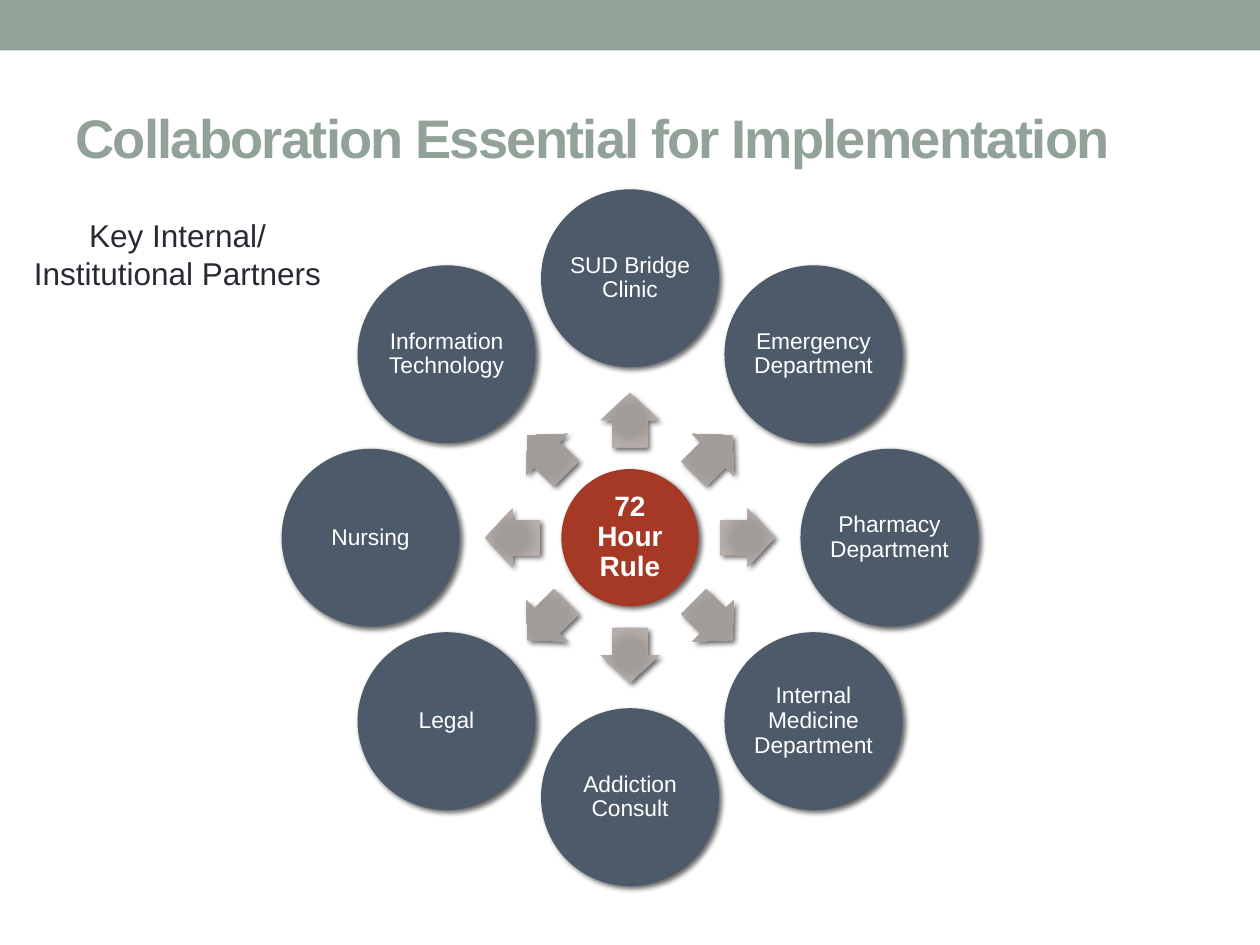
import math
from lxml import etree
from pptx import Presentation
from pptx.dml.color import RGBColor
from pptx.enum import shapes, text
from pptx.oxml import parse_xml
from pptx.oxml import ns
from pptx.util import Cm, Pt

SAGE = RGBColor(0x93, 0xA2, 0x99)
SLATE = RGBColor(0x4C, 0x5A, 0x6A)
BRICK = RGBColor(0xA5, 0x39, 0x26)
INK = RGBColor(0x29, 0x29, 0x34)
WHITE = RGBColor(0xFF, 0xFF, 0xFF)
BLACK = RGBColor(0x00, 0x00, 0x00)
ARROW_STOPS = [
    (0, RGBColor(0xA2, 0x9C, 0x99)),
    (34, RGBColor(0xA2, 0x9C, 0x99)),
    (70, RGBColor(0xB5, 0xAE, 0xAB)),
    (100, RGBColor(0xBC, 0xB7, 0xB4)),
]
PARTNERS = [
    "SUD Bridge Clinic",
    "Emergency Department",
    "Pharmacy Department",
    "Internal Medicine Department",
    "Addiction Consult",
    "Legal",
    "Nursing",
    "Information Technology",
]


def write_text(shape, lines, size, color, bold=False, align=text.PP_ALIGN.CENTER,
               anchor=text.MSO_ANCHOR.MIDDLE, line_spacing=1.0, tracking=None, inset=None):
    frame = shape.text_frame
    frame.word_wrap = True
    frame.vertical_anchor = anchor
    if inset is not None:
        frame.margin_left = frame.margin_right = inset
        frame.margin_top = frame.margin_bottom = inset
    for index, line in enumerate(lines):
        para = frame.paragraphs[0] if index == 0 else frame.add_paragraph()
        para.alignment = align
        para.line_spacing = line_spacing
        span = para.add_run()
        span.text = line
        span.font.name = "Arial"
        span.font.size = Pt(size)
        span.font.bold = bold
        span.font.color.rgb = color
        if tracking is not None:
            span.font._element.set("spc", str(tracking * 100))


def add_soft_shadow(shape):
    shape.shadow.inherit = False
    effects = shape._element.spPr.find(ns.qn("a:effectLst"))
    shadow = etree.SubElement(effects, ns.qn("a:outerShdw"), blurRad=str(Pt(3)),
                              dist=str(Pt(2)), dir="2700000", rotWithShape="0")
    color = etree.SubElement(shadow, ns.qn("a:srgbClr"), val=str(BLACK))
    etree.SubElement(color, ns.qn("a:alpha"), val="60000")


def fill_radial(shape, stops):
    shape.fill.background()
    stop_xml = "".join(
        f'<a:gs pos="{position * 1000}"><a:srgbClr val="{color}"/></a:gs>'
        for position, color in stops)
    gradient = parse_xml(
        f'<a:gradFill {ns.nsdecls("a")} rotWithShape="1"><a:gsLst>{stop_xml}</a:gsLst>'
        '<a:path path="circle"><a:fillToRect l="100000" t="100000" r="100000" b="100000"/>'
        '</a:path></a:gradFill>')
    properties = shape._element.spPr
    properties.replace(properties.find(ns.qn("a:noFill")), gradient)


def add_centred(page, kind, x, y, width, height):
    return page.shapes.add_shape(kind, int(x - width / 2), int(y - height / 2), width, height)


def add_disc(page, x, y, diameter, color, label, size, bold=False):
    disc = add_centred(page, shapes.MSO_SHAPE.OVAL, x, y, diameter, diameter)
    disc.fill.solid()
    disc.fill.fore_color.rgb = color
    disc.line.color.rgb = color
    disc.line.width = Pt(0.75)
    add_soft_shadow(disc)
    write_text(disc, [label], size, WHITE, bold=bold, line_spacing=0.9, inset=Cm(0.05))


def add_arrow(page, x, y, angle):
    arrow = add_centred(page, shapes.MSO_SHAPE.RIGHT_ARROW, x, y, Cm(1.1), Cm(1.18))
    arrow.adjustments[0] = 0.6
    arrow.adjustments[1] = 0.5
    arrow.rotation = angle % 360
    fill_radial(arrow, ARROW_STOPS)
    arrow.line.fill.background()
    add_soft_shadow(arrow)


def add_banner(page, left, top, width, height):
    banner = page.shapes.add_shape(shapes.MSO_SHAPE.RECTANGLE, left, top, width, height)
    banner.shadow.inherit = False
    banner.fill.solid()
    banner.fill.fore_color.rgb = SAGE
    banner.line.fill.background()


def add_title(page, left, top, width, height):
    box = page.shapes.add_textbox(left, top, width, height)
    write_text(box, ["Collaboration Essential for Implementation"], 31, SAGE, bold=True,
               align=text.PP_ALIGN.LEFT, line_spacing=0.9, tracking=-1)


def add_caption(page, left, top, width, height):
    box = page.shapes.add_textbox(left, top, width, height)
    write_text(box, ["Key Internal/", "Institutional Partners"], 18, INK,
               anchor=text.MSO_ANCHOR.TOP)


def add_partner_wheel(page, left, top, size):
    disc_size = Cm(3.56)
    centre_x, centre_y = left + size / 2, top + size / 2
    partner_radius = (size - disc_size) / 2
    arrow_radius = Cm(2.37)
    add_disc(page, centre_x, centre_y, Cm(2.74), BRICK, "72 Hour Rule", 16, bold=True)
    for index, partner in enumerate(PARTNERS):
        angle = index * 360 / len(PARTNERS) - 90
        across, down = math.cos(math.radians(angle)), math.sin(math.radians(angle))
        add_arrow(page, centre_x + arrow_radius * across,
                  centre_y + arrow_radius * down, angle)
        add_disc(page, centre_x + partner_radius * across,
                 centre_y + partner_radius * down, disc_size, SLATE, partner, 13)


def main():
    deck = Presentation()
    deck.slide_width, deck.slide_height = Cm(25.4), Cm(19.05)
    page = deck.slides.add_slide(deck.slide_layouts[6])
    add_banner(page, 0, 0, deck.slide_width, Cm(1.02))
    add_title(page, Cm(1.27), Cm(1.47), Cm(22.86), Cm(2.74))
    add_partner_wheel(page, Cm(5.69), Cm(3.83), Cm(14.02))
    add_caption(page, Cm(0.38), Cm(4.24), Cm(6.4), Cm(1.8))
    deck.save("out.pptx")


if __name__ == "__main__":
    main()
